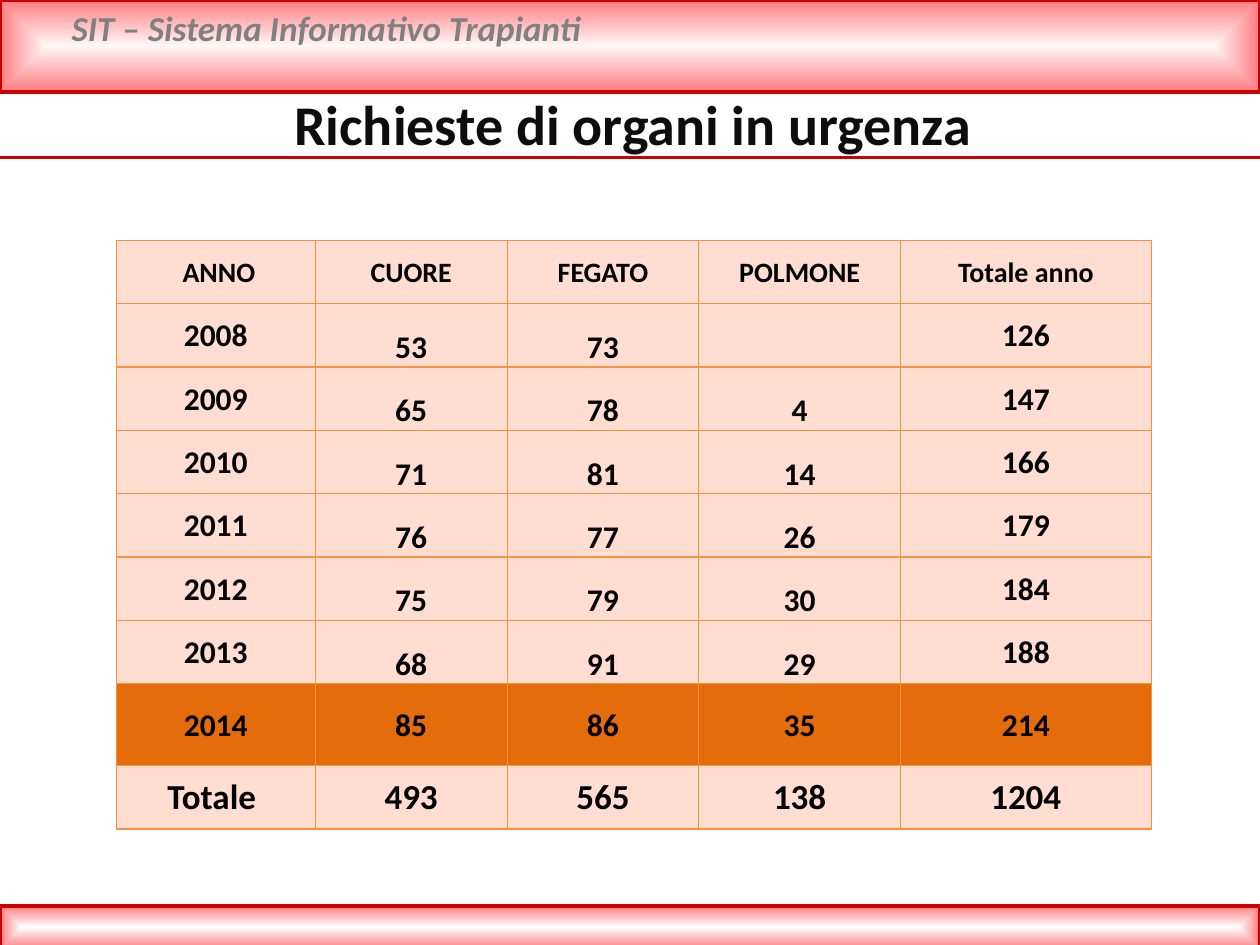
import pptx
import pptx.dml.color
import pptx.enum.shapes
import pptx.enum.text
import pptx.oxml
import pptx.oxml.ns
import pptx.util

Pt = pptx.util.Pt
ALIGN = pptx.enum.text.PP_ALIGN
ANCHOR = pptx.enum.text.MSO_ANCHOR
COLORS = {
    "white": "FFFFFF", "blush": "FFF6F6", "pink": "FF7C80", "red": "CC0000",
    "gray": "808080", "ink": "0D0D0D", "black": "000000",
    "cell": "FFDDD0", "highlight": "E46C0A", "border": "F69240",
}
HEADERS = ["\N{NO-BREAK SPACE}ANNO", "CUORE", "FEGATO", "POLMONE", "Totale anno"]
REQUESTS = [
    ["2008", "53", "73", "", "126"],
    ["2009", "65", "78", "4", "147"],
    ["2010", "71", "81", "14", "166"],
    ["2011", "76", "77", "26", "179"],
    ["2012", "75", "79", "30", "184"],
    ["2013", "68", "91", "29", "188"],
    ["2014", "85", "86", "35", "214"],
]
TOTALS = ["Totale\N{NO-BREAK SPACE}", "493", "565", "138", "1204"]


def rgb(name):
    return pptx.dml.color.RGBColor.from_string(COLORS[name])


def element(xml):
    return pptx.oxml.parse_xml(xml.replace(">", f" {pptx.oxml.ns.nsdecls('a')}>", 1))


class Deck:
    """Hold the style and the current slide, and draw its elements."""

    font = "Calibri"

    def __init__(self, prs):
        self.s = prs.slides.add_slide(prs.slide_layouts[6])

    def run(self, p, text, size, color, italic=False):
        r = p.add_run()
        r.text = text
        r.font.name = self.font
        r.font.size = Pt(size)
        r.font.bold = True
        r.font.italic = italic
        r.font.color.rgb = rgb(color)

    def band(self, top, height, center):
        sp = self.s.shapes.add_shape(
            pptx.enum.shapes.MSO_SHAPE.RECTANGLE, 0, Pt(top), Pt(720), Pt(height))
        sp.shadow.inherit = False
        sp.fill.gradient()
        for stop, color in zip(sp.fill.gradient_stops, (center, "pink")):
            stop.color.rgb = rgb(color)
        lin = sp._element.spPr.find(".//" + pptx.oxml.ns.qn("a:lin"))
        lin.getparent().replace(lin, element(
            '<a:path path="rect"><a:fillToRect l="50000" t="50000" r="50000" b="50000"/></a:path>'))
        sp.line.color.rgb = rgb("red")
        sp.line.width = Pt(2)

    def rule(self, y):
        c = self.s.shapes.add_connector(
            pptx.enum.shapes.MSO_CONNECTOR.STRAIGHT, 0, Pt(y), Pt(720), Pt(y))
        c.line.color.rgb = rgb("red")
        c.line.width = Pt(2)
        c._element.spPr.append(element("<a:effectLst></a:effectLst>"))

    def text(self, box, text, size, color, align=ALIGN.LEFT, italic=False):
        tf = self.s.shapes.add_textbox(*map(Pt, box)).text_frame
        tf.word_wrap = True
        p = tf.paragraphs[0]
        p.alignment = align
        self.run(p, text, size, color, italic)

    def cell(self, cell, text, size, fill, anchor):
        cell.margin_left = cell.margin_top = cell.margin_right = Pt(0.72)
        cell.margin_bottom = 0
        cell.vertical_anchor = anchor
        tcPr = cell._tc.get_or_add_tcPr()
        for side in "LRTB":
            tcPr.append(element(
                f'<a:ln{side} w="{Pt(0.75)}"><a:solidFill>'
                f'<a:srgbClr val="{COLORS["border"]}"/></a:solidFill></a:ln{side}>'))
        cell.fill.solid()
        cell.fill.fore_color.rgb = rgb(fill)
        p = cell.text_frame.paragraphs[0]
        p.alignment = ALIGN.CENTER
        if text:
            self.run(p, text, size, "black")
        else:
            p.font.size = Pt(size)

    def table(self, left, top, widths, heights, rows):
        frame = self.s.shapes.add_table(
            len(rows), len(widths), Pt(left), Pt(top), Pt(sum(widths)), Pt(sum(heights)))
        tbl = frame.table
        tbl.first_row = tbl.horz_banding = False
        for column, width in zip(tbl.columns, widths):
            column.width = Pt(width)
        for i, (texts, size, fill, inner) in enumerate(rows):
            tbl.rows[i].height = Pt(heights[i])
            for j, text in enumerate(texts):
                anchor = inner if 0 < j < len(widths) - 1 else ANCHOR.MIDDLE
                self.cell(tbl.cell(i, j), text, size, fill, anchor)


def main():
    prs = pptx.Presentation()
    prs.slide_width, prs.slide_height = Pt(720), Pt(540)
    deck = Deck(prs)
    deck.band(0, 52.6, "blush")
    deck.text((33.8, 0, 646.6, 31.7), "SIT – Sistema Informativo Trapianti", 20, "gray", italic=True)
    deck.band(517.7, 24.5, "white")
    deck.rule(90)
    rows = [(HEADERS, 16, "cell", ANCHOR.MIDDLE)]
    rows += [(texts, 18, "cell", ANCHOR.BOTTOM) for texts in REQUESTS[:-1]]
    rows += [(REQUESTS[-1], 18, "highlight", ANCHOR.MIDDLE), (TOTALS, 20, "cell", ANCHOR.MIDDLE)]
    deck.table(66.4, 137.3, [113.8, 109.6, 109.6, 115.2, 143.3], [36.2] * 7 + [46.8, 36.2], rows)
    deck.text((144.7, 47.5, 434.2, 46.1), "Richieste di organi in urgenza", 32, "ink", ALIGN.CENTER)
    prs.save("out.pptx")


if __name__ == "__main__":
    main()
